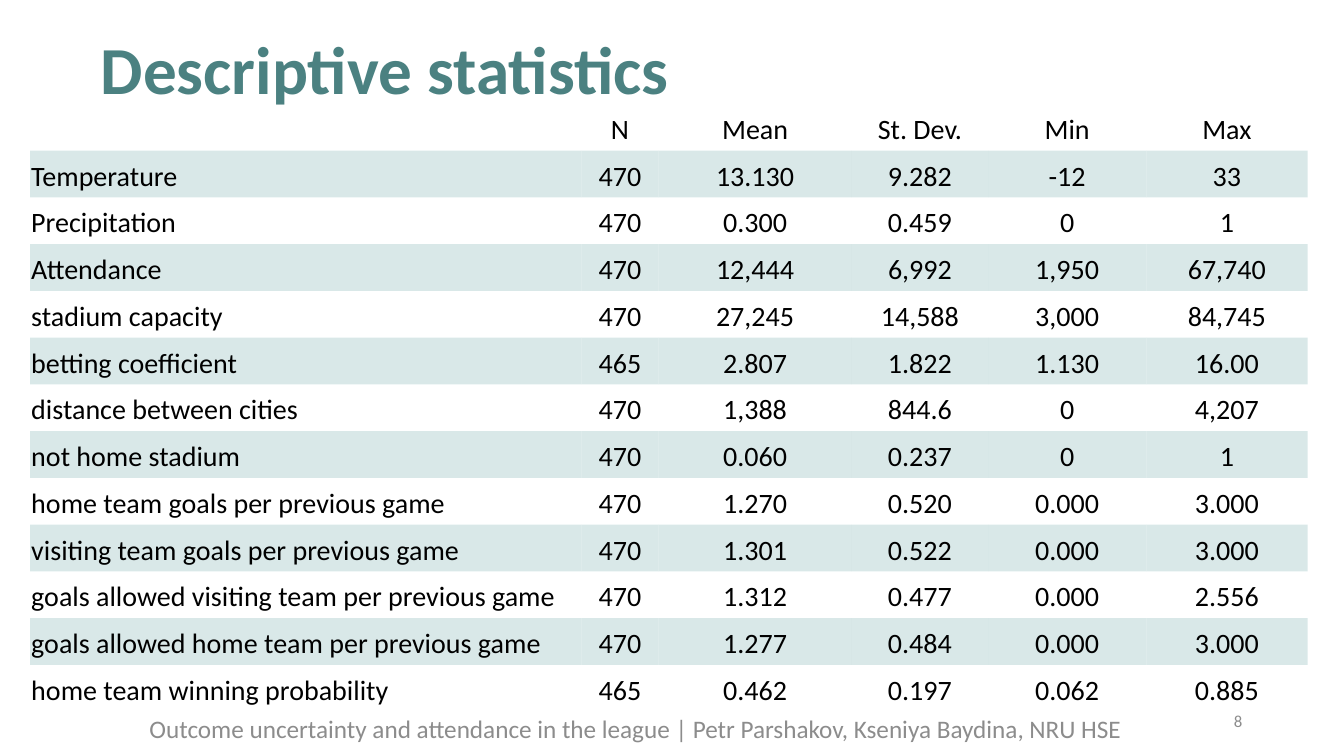
import lxml.etree
import pptx
import pptx.dml.color
import pptx.enum.text
import pptx.oxml.ns
import pptx.util

Inches = pptx.util.Inches
ALIGN = pptx.enum.text.PP_ALIGN
MIDDLE = pptx.enum.text.MSO_ANCHOR.MIDDLE

COLOURS = {"title": "4B8181", "band": "C5DDDD", "text": "000000", "footer": "8C8C8C"}
BAND_OPACITY = 65
PLAIN_TABLE_STYLE = "{2D5ABB26-0587-4C30-8999-92F81FD0307C}"
COLUMN_WIDTHS = [5.47, 0.76, 1.92, 1.35, 1.57, 1.6]
STATISTICS = [
    ["", "N", "Mean", "St. Dev.", "Min", "Max"],
    ["Temperature", "470", "13.130", "9.282", "-12", "33"],
    ["Precipitation", "470", "0.300", "0.459", "0", "1"],
    ["Attendance", "470", "12,444", "6,992", "1,950", "67,740"],
    ["stadium capacity", "470", "27,245", "14,588", "3,000", "84,745"],
    ["betting coefficient", "465", "2.807", "1.822", "1.130", "16.00"],
    ["distance between cities", "470", "1,388", "844.6", "0", "4,207"],
    ["not home stadium", "470", "0.060", "0.237", "0", "1"],
    ["home team goals per previous game", "470", "1.270", "0.520", "0.000", "3.000"],
    ["visiting team goals per previous game", "470", "1.301", "0.522", "0.000", "3.000"],
    ["goals allowed visiting team per previous game", "470", "1.312", "0.477", "0.000", "2.556"],
    ["goals allowed home team per previous game", "470", "1.277", "0.484", "0.000", "3.000"],
    ["home team winning probability", "465", "0.462", "0.197", "0.062", "0.885"],
]


def colour(name):
    return pptx.dml.color.RGBColor.from_string(COLOURS[name])


def write(frame, text, *, size, color, align=ALIGN.LEFT, bold=False, spacing=1.0):
    para = frame.paragraphs[0]
    para.text = text
    para.alignment = align
    para.line_spacing = spacing
    para.font.name = "Calibri"
    para.font.size = pptx.util.Pt(size)
    para.font.bold = bold
    para.font.color.rgb = colour(color)


def fill_band(cell):
    """Give a cell the translucent band colour."""
    cell.fill.solid()
    cell.fill.fore_color.rgb = colour("band")
    tint = cell.fill._xPr.find(".//" + pptx.oxml.ns.qn("a:srgbClr"))
    alpha = lxml.etree.SubElement(tint, pptx.oxml.ns.qn("a:alpha"))
    alpha.set("val", str(BAND_OPACITY * 1000))


def add_title(page, left, top, width, height):
    title = page.shapes.title
    title.left, title.top = Inches(left), Inches(top)
    title.width, title.height = Inches(width), Inches(height)
    title.text_frame.vertical_anchor = MIDDLE
    write(title.text_frame, "Descriptive statistics", size=48, color="title",
          bold=True, spacing=0.9)


def add_statistics(page, left, top, width, height):
    frame = page.shapes.add_table(len(STATISTICS), len(COLUMN_WIDTHS), Inches(left),
                                  Inches(top), Inches(width), Inches(height))
    frame.element.find(".//" + pptx.oxml.ns.qn("a:tableStyleId")).text = PLAIN_TABLE_STYLE
    table = frame.table
    table.first_row = table.horz_banding = False
    for column, share in zip(table.columns, COLUMN_WIDTHS):
        column.width = Inches(width * share / sum(COLUMN_WIDTHS))
    for row_index, values in enumerate(STATISTICS):
        table.rows[row_index].height = Inches(height / len(STATISTICS))
        for column_index, value in enumerate(values):
            cell = table.cell(row_index, column_index)
            cell.margin_left = cell.margin_right = Inches(0.01)
            cell.margin_top = cell.margin_bottom = Inches(0.01)
            cell.vertical_anchor = MIDDLE
            write(cell.text_frame, value, size=20, color="text", spacing=1.15,
                  align=ALIGN.CENTER if column_index else ALIGN.LEFT)
            if row_index % 2:
                fill_band(cell)
            else:
                cell.fill.background()


def add_footer_text(page, text, left, top, width, height, *, size, align):
    box = page.shapes.add_textbox(Inches(left), Inches(top), Inches(width), Inches(height))
    box.text_frame.word_wrap = True
    box.text_frame.vertical_anchor = MIDDLE
    write(box.text_frame, text, size=size, color="footer", align=align)


def main():
    deck = pptx.Presentation()
    deck.slide_width, deck.slide_height = Inches(13.33), Inches(7.5)
    page = deck.slides.add_slide(deck.slide_layouts.get_by_name("Title Only"))
    add_statistics(page, 0.3, 1.03, 12.67, 6.03)
    add_title(page, 0.9, 0, 11.5, 1.45)
    add_footer_text(page, "8", 9.42, 6.95, 3, 0.4, size=12, align=ALIGN.RIGHT)
    add_footer_text(
        page,
        "Outcome uncertainty and attendance in the league | Petr Parshakov, Kseniya Baydina, NRU HSE",
        0.4, 6.95, 11.81, 0.55, size=18, align=ALIGN.CENTER)
    deck.save("out.pptx")


if __name__ == "__main__":
    main()
